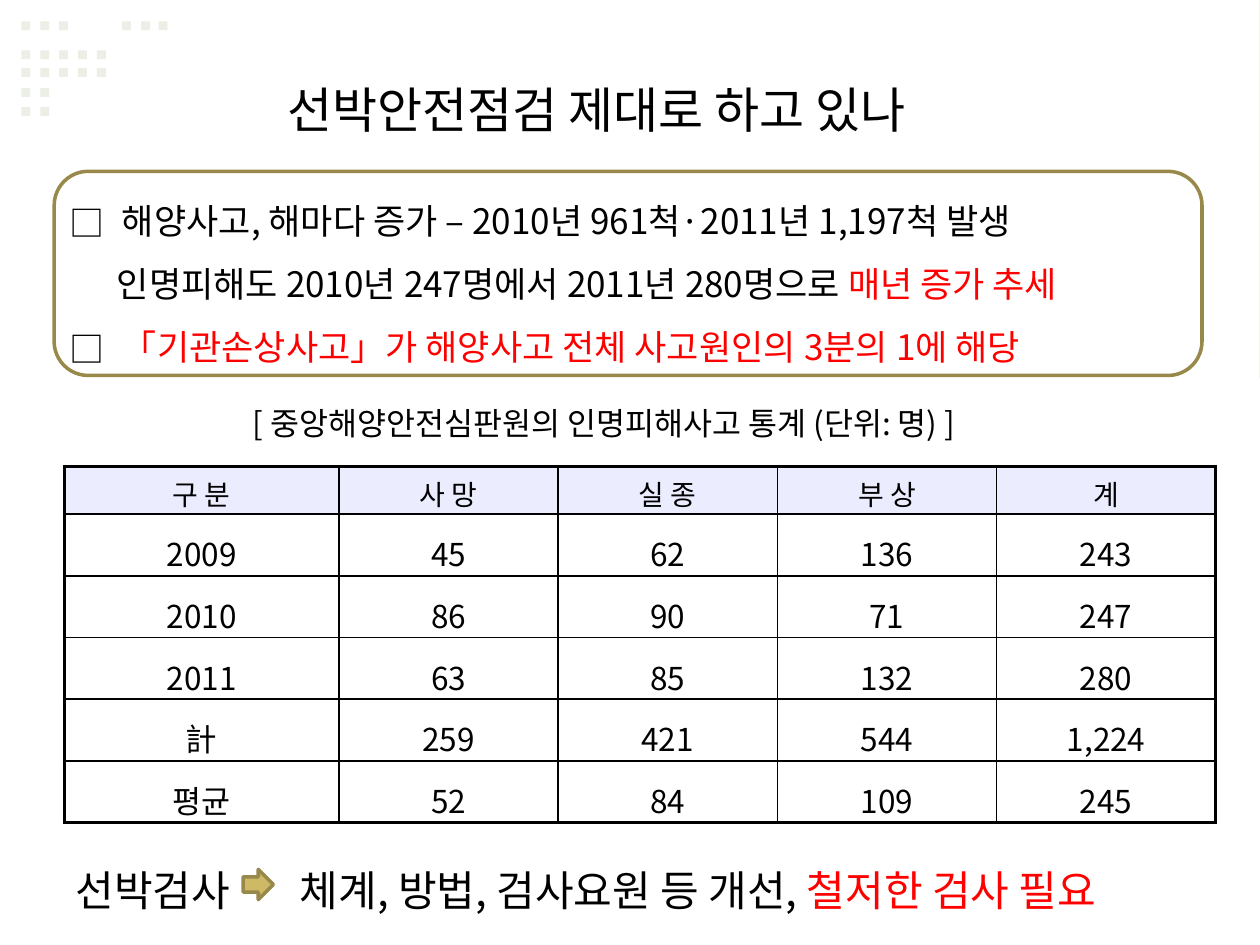
from typing import NamedTuple

from lxml import etree
from pptx import Presentation
from pptx import util as u
from pptx.dml.color import RGBColor
from pptx.enum import shapes, text
from pptx.oxml import parse_xml
from pptx.oxml.ns import nsdecls, qn

IN = u.Inches
FONT = "Noto Sans CJK KR"
HUES = {"ink": "000000", "red": "FF0000", "green": "9CB084", "dot": "EBEFE6",
        "gold": "CEB966", "edge": "98894B", "head": "ECECFF", "white": "FFFFFF"}
LEFT, MID = text.PP_ALIGN.LEFT, text.PP_ALIGN.CENTER


class Box(NamedTuple):
    x: float
    y: float
    w: float
    h: float

    def emu(self) -> list:
        return [IN(v) for v in self]


class Run(NamedTuple):
    words: str
    hue: str = "ink"


class DotRow(NamedTuple):
    y: float
    cols: tuple


DOTS = [DotRow(0.17, (0, 1, 2, 5.33, 6.33, 7.26)), DotRow(0.4, range(5)),
        DotRow(0.54, range(5)), DotRow(0.7, range(2)), DotRow(0.85, range(2))]

CORNER = [(8.81, 0), (10, 0), (10, 2.91), (9.98, 2.52), (9.96, 2.17), (9.93, 1.85),
          (9.9, 1.57), (9.86, 1.32), (9.82, 1.1), (9.77, 0.9), (9.71, 0.73),
          (9.65, 0.58), (9.57, 0.45), (9.48, 0.34), (9.37, 0.25), (9.26, 0.17),
          (9.12, 0.11), (8.98, 0.05)]

SWOOSH = [(8.92, 6.25), (8.92, 6.32), (8.67, 6.5), (8.35, 6.67), (7.95, 6.82),
          (7.5, 6.94), (7, 7.04), (6.46, 7.13), (5.89, 7.19), (5.31, 7.23),
          (4.72, 7.25), (4.14, 7.25), (3.57, 7.23), (3.04, 7.19), (2.55, 7.12),
          (2.1, 7.04), (1.72, 6.94), (1.42, 6.82), (1.42, 6.79), (1.73, 6.91),
          (2.12, 7), (2.57, 7.08), (3.07, 7.14), (3.61, 7.17), (4.17, 7.19),
          (4.76, 7.19), (5.34, 7.16), (5.93, 7.12), (6.49, 7.06), (7.03, 6.97),
          (7.53, 6.87), (7.98, 6.75), (8.37, 6.6), (8.68, 6.44)]

ROWS = [("구 분", "사 망", "실 종", "부 상", "계"),
        ("2009", "45", "62", "136", "243"),
        ("2010", "86", "90", "71", "247"),
        ("2011", "63", "85", "132", "280"),
        ("計", "259", "421", "544", "1,224"),
        ("평균", "52", "84", "109", "245")]


def rgb(hue: str) -> RGBColor:
    return RGBColor.from_string(HUES[hue])


def write(par, *runs: Run, size: float, font: str = FONT, align=LEFT, gap: float = 1):
    par.alignment, par.line_spacing = align, gap
    for part in runs:
        run = par.add_run()
        run.text = part.words
        run.font.size = u.Pt(size)
        run.font.color.rgb = rgb(part.hue)
        run.font.name = font
        etree.SubElement(run.font._element, qn("a:ea"), typeface=FONT)


def indent(par, dist: float, mark: str = ""):
    """Indent a paragraph, hanging a bullet mark to its left if given."""
    props = par._p.get_or_add_pPr()
    props.set("marL", str(IN(dist)))
    if mark:
        props.set("indent", str(-IN(dist)))
        etree.SubElement(props, qn("a:buFont"), typeface=FONT)
        etree.SubElement(props, qn("a:buChar"), char=mark)


def add_tab(par, dist: float):
    tabs = etree.SubElement(par._p.get_or_add_pPr(), qn("a:tabLst"))
    etree.SubElement(tabs, qn("a:tab"), pos=str(IN(dist)), algn="l")


def add_text(slide, box: Box):
    frame = slide.shapes.add_textbox(*box.emu()).text_frame
    frame.word_wrap = True
    return frame


def paint(shape, fill: str = "", line: str = ""):
    shape.shadow.inherit = False
    if fill:
        shape.fill.solid()
        shape.fill.fore_color.rgb = rgb(fill)
    else:
        shape.fill.background()
    if line:
        shape.line.color.rgb = rgb(line)
        shape.line.width = u.Pt(2)
    else:
        shape.line.fill.background()


def add_form(slide, kind, box: Box, fill: str = "", line: str = ""):
    paint(slide.shapes.add_shape(kind, *box.emu()), fill, line)


def add_free(slide, pts: list, fill: str):
    pen = slide.shapes.build_freeform(*pts[0], scale=IN(1))
    pen.add_line_segments(pts[1:], close=True)
    shape = pen.convert_to_shape()
    paint(shape, fill)
    return shape


def fade(shape):
    """Make the fill green in the middle and clear white at both ends."""
    pale = f'<a:srgbClr val="{HUES["white"]}"><a:alpha val="30000"/></a:srgbClr>'
    grad = parse_xml(
        f'<a:gradFill {nsdecls("a")} rotWithShape="1"><a:gsLst>'
        f'<a:gs pos="0">{pale}</a:gs>'
        f'<a:gs pos="50000"><a:srgbClr val="{HUES["green"]}"/></a:gs>'
        f'<a:gs pos="100000">{pale}</a:gs></a:gsLst><a:lin ang="0" scaled="1"/></a:gradFill>')
    props = shape._element.spPr
    props.replace(props.find(qn("a:solidFill")), grad)


def rule(cell, side: str, width: float):
    cell._tc.get_or_add_tcPr().append(parse_xml(
        f'<a:{side} {nsdecls("a")} w="{u.Pt(width)}"><a:solidFill>'
        f'<a:srgbClr val="{HUES["ink"]}"/></a:solidFill></a:{side}>'))


def add_grid(slide, box: Box):
    last, end = len(ROWS) - 1, len(ROWS[0]) - 1
    table = slide.shapes.add_table(last + 1, end + 1, *box.emu()).table
    table.first_row = table.horz_banding = False
    for c, col in enumerate(table.columns):
        col.width = IN(1.74 if c else 2.18)
    for r, row in enumerate(table.rows):
        row.height = IN(0.49 if r else 0.38)
        for c, words in enumerate(ROWS[r]):
            cell = table.cell(r, c)
            cell.margin_left = cell.margin_right = IN(0.02)
            cell.margin_top = cell.margin_bottom = IN(0.02)
            cell.vertical_anchor = text.MSO_ANCHOR.MIDDLE
            sides = {"lnL": c == 0, "lnR": c == end, "lnT": r == 0, "lnB": r == last}
            for side, outer in sides.items():
                rule(cell, side, 1.7 if outer else 1)
            if r:
                cell.fill.background()
            else:
                cell.fill.solid()
                cell.fill.fore_color.rgb = rgb("head")
            write(cell.text_frame.paragraphs[0], Run(words), size=18 if r else 16,
                  font="Calibri" if words in ("計", "평균") else FONT,
                  align=MID, gap=1.3 if r else 1.1)


def main():
    deck = Presentation()
    deck.slide_width, deck.slide_height = IN(10), IN(7.5)
    slide = deck.slides.add_slide(deck.slide_layouts[5])

    for row in DOTS:
        for col in row.cols:
            add_form(slide, shapes.MSO_SHAPE.RECTANGLE,
                     Box(0.17 + 0.15 * col, row.y, 0.07, 0.07), "dot")
    add_free(slide, CORNER, "green")
    fade(add_free(slide, SWOOSH, "green"))

    title = slide.shapes.title
    title.left, title.top, title.width, title.height = Box(2.18, 0.58, 5.7, 0.57).emu()
    frame = title.text_frame
    frame.auto_size = text.MSO_AUTO_SIZE.NONE
    frame.vertical_anchor = text.MSO_ANCHOR.TOP
    write(frame.paragraphs[0], Run("선박안전점검 제대로 하고 있나"), size=28)

    facts = [("□", [Run("해양사고, 해마다 증가 – 2010년 961척·2011년 1,197척 발생")]),
             ("", [Run("인명피해도 2010년 247명에서 2011년 280명으로 "),
                   Run("매년 증가 추세", "red")]),
             ("□", [Run("「기관손상사고」가 해양사고 전체 사고원인의 3분의 1에 해당", "red")])]
    frame = add_text(slide, Box(0.45, 1.37, 9.36, 1.62))
    for n, (mark, runs) in enumerate(facts):
        par = frame.add_paragraph() if n else frame.paragraphs[0]
        write(par, *runs, size=20, gap=1.5)
        indent(par, 0.42 if mark else 0.38, mark)
        if mark:
            hue = parse_xml(f'<a:buClr {nsdecls("a")}><a:srgbClr val="{HUES["ink"]}"/></a:buClr>')
            par._p.pPr.find(qn("a:buFont")).addprevious(hue)
    add_form(slide, shapes.MSO_SHAPE.ROUNDED_RECTANGLE, Box(0.43, 1.36, 9.11, 1.62), line="edge")

    frame = add_text(slide, Box(0.2, 6.61, 9.56, 0.71))
    frame.margin_left = IN(0.4)
    par = frame.paragraphs[0]
    write(par, Run("선박검사\t체계, 방법, 검사요원 등 개선, "), Run("철저한 검사 필요", "red"),
          size=24, gap=1.5)
    add_tab(par, 1.78)

    add_grid(slide, Box(0.51, 3.7, 9.14, 2.83))
    frame = add_text(slide, Box(1.91, 3.16, 6.57, 0.4))
    write(frame.paragraphs[0], Run("[ 중앙해양안전심판원의 인명피해사고 통계 (단위: 명) ]"), size=18)
    add_form(slide, shapes.MSO_SHAPE.RIGHT_ARROW, Box(1.93, 6.9, 0.24, 0.24), "gold", "edge")
    deck.save("out.pptx")


if __name__ == "__main__":
    main()
